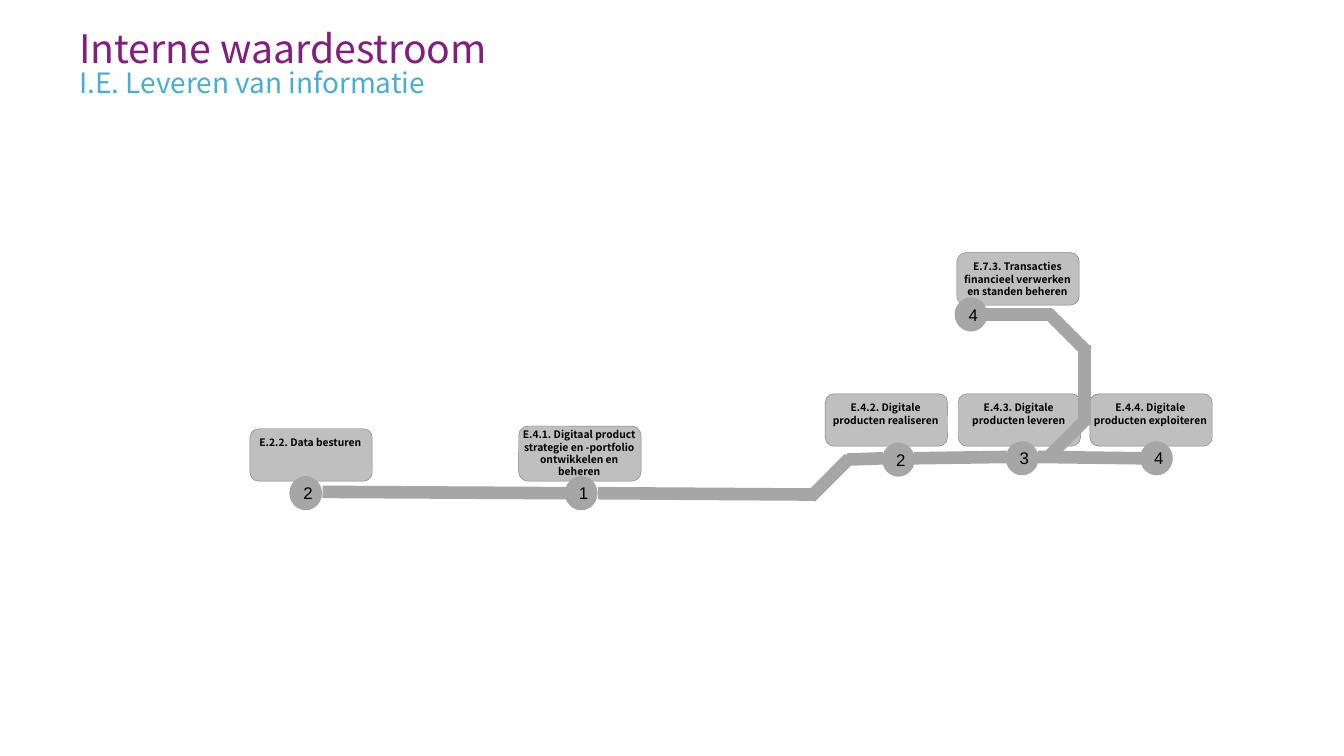
"""Build the slide with the internal value stream as a metro line."""
from lxml.etree import SubElement
from pptx import Presentation
from pptx.dml.color import RGBColor
from pptx.enum.shapes import MSO_CONNECTOR as Connector, MSO_SHAPE as Shape
from pptx.enum.text import MSO_ANCHOR as Anchor, PP_ALIGN as Align
from pptx.oxml.ns import qn
from pptx.util import Inches, Pt

COLORS = {
    "title": "821E7D",
    "subtitle": "48AED0",
    "box": "BFBFBF",
    "border": "808080",
    "track": "A6A6A6",
    "text": "000000",
}
SANS = "Noto Sans CJK TC"


def write(shape, text, font, size, color, insets=None, bold=False):
    frame = shape.text_frame
    frame.word_wrap = True
    if insets:
        (frame.margin_left, frame.margin_top,
         frame.margin_right, frame.margin_bottom) = map(Inches, insets)
    paragraph = frame.paragraphs[0]
    paragraph.text = text
    paragraph.font.name = font
    paragraph.font.size = Pt(size)
    paragraph.font.bold = bold
    paragraph.font.color.rgb = RGBColor.from_string(COLORS[color])
    return paragraph


def add_block(kind, place, fill, line, width):
    shape = page.shapes.add_shape(kind, *map(Inches, place))
    shape.shadow.inherit = False
    shape.fill.solid()
    shape.fill.fore_color.rgb = RGBColor.from_string(COLORS[fill])
    shape.line.color.rgb = RGBColor.from_string(COLORS[line])
    shape.line.width = Pt(width)
    return shape


deck = Presentation()
deck.slide_width = Inches(10)
deck.slide_height = Inches(10 * 9 / 16)
page = deck.slides.add_slide(deck.slide_layouts[6])

headings = [
    ("Interne waardestroom", (0.59, 0.14, 7.28, 0.39), 21, "title", Pt(28)),
    ("I.E. Leveren van informatie", (0.59, 0.44, 7.55, 0.22), 15, "subtitle", 1.2),
]
for text, place, size, color, spacing in headings:
    box = page.shapes.add_textbox(*map(Inches, place))
    para = write(box, text, SANS, size, color, (0, 0, 0, 0))
    para.line_spacing = spacing

processes = [
    ("E.7.3. Transacties financieel verwerken en standen beheren", 7.12, 1.88, 0.39, 0.04),
    ("E.4.1. Digitaal product strategie en -portfolio ontwikkelen en beheren", 3.86, 3.17, 0.41, 0),
    ("E.2.2. Data besturen", 1.86, 3.19, 0.39, 0.04),
    ("E.4.2. Digitale producten realiseren", 6.14, 2.93, 0.39, 0.04),
    ("E.4.3. Digitale producten leveren", 7.13, 2.93, 0.39, 0.04),
    ("E.4.4. Digitale producten exploiteren", 8.11, 2.93, 0.39, 0.04),
]
for text, left, top, height, inset in processes:
    process = add_block(Shape.ROUNDED_RECTANGLE, (left, top, 0.91, height), "box", "border", 0.25)
    process.text_frame.vertical_anchor = Anchor.TOP
    para = write(process, text, SANS, 5.5, "text", (0, inset, 0.01, 0.04), True)
    para.alignment = Align.CENTER

stations = [
    ("1", 4.21, 3.55),
    ("3", 7.49, 3.29),
    ("2", 6.57, 3.3),
    ("4", 7.11, 2.22),
    ("2", 2.16, 3.55),
    ("4", 8.49, 3.29),
]
for number, left, top in stations:
    station = add_block(Shape.OVAL, (left, top, 0.23, 0.24), "track", "track", 1)
    station.text_frame.vertical_anchor = Anchor.MIDDLE
    para = write(station, number, "Arial", 9, "text")
    para.alignment = Align.CENTER

tracks = [
    (8.49, 3.41, 7.72, 3.4),
    (7.49, 3.4, 6.8, 3.41),
    (4.21, 3.67, 2.4, 3.66),
    (6.07, 3.68, 4.45, 3.67),
    (6.03, 3.7, 6.32, 3.41),
    (6.57, 3.41, 6.3, 3.42),
    (7.8, 3.4, 8.09, 3.11),
    (7.8, 2.33, 8.09, 2.62),
    (7.83, 2.34, 7.34, 2.34),
    (8.07, 3.16, 8.07, 2.57),
]
for ends in tracks:
    track = page.shapes.add_connector(Connector.STRAIGHT, *map(Inches, ends))
    track.line.color.rgb = RGBColor.from_string(COLORS["track"])
    track.line.width = Pt(6.75)
    SubElement(track.element.spPr, qn("a:effectLst"))

deck.save("out.pptx")
